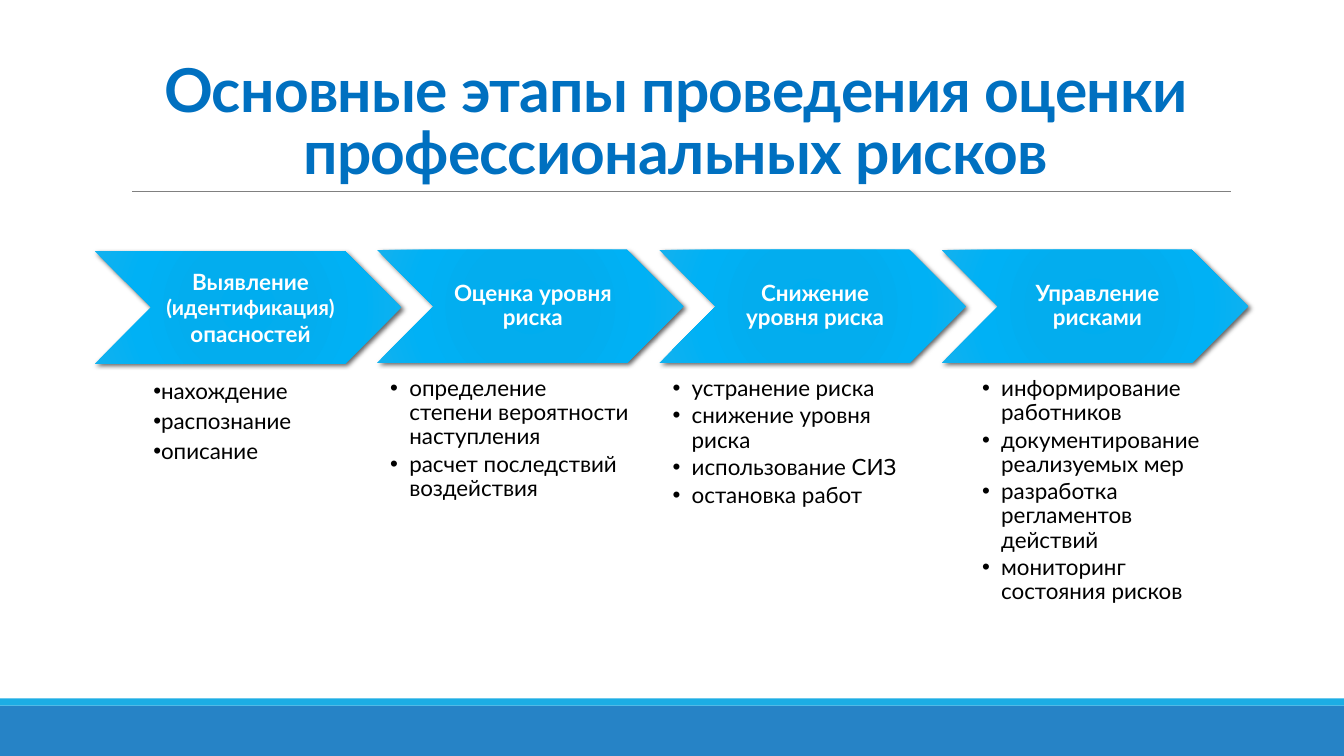
from lxml import etree
from pptx import Presentation
from pptx.dml.color import RGBColor
from pptx.enum.shapes import MSO_CONNECTOR, MSO_SHAPE
from pptx.enum.text import MSO_ANCHOR, MSO_AUTO_SIZE, PP_ALIGN
from pptx.oxml import parse_xml
from pptx.oxml.ns import nsdecls, qn
from pptx.util import Inches, Pt

RECTANGLE, CHEVRON = MSO_SHAPE.RECTANGLE, MSO_SHAPE.CHEVRON
TOP, MIDDLE, BOTTOM = MSO_ANCHOR.TOP, MSO_ANCHOR.MIDDLE, MSO_ANCHOR.BOTTOM
LEFT, CENTER = PP_ALIGN.LEFT, PP_ALIGN.CENTER

TITLE = "Основные этапы проведения оценки профессиональных рисков"
STAGES = [
    {"label": [("Выявление ", 16), ("(идентификация) ", 15), ("опасностей", 16)],
     "steps": ["нахождение", "распознание", "описание"],
     "top": 2.49, "list_left": 1.33, "hanging": 0, "spacing": 1.0},
    {"label": [("Оценка уровня риска", 16)],
     "steps": ["определение степени вероятности наступления",
               "расчет последствий воздействия"],
     "list_left": 3.87},
    {"label": [("Снижение уровня риска", 16)],
     "steps": ["устранение риска", "снижение уровня риска",
               "использование СИЗ", "остановка работ"],
     "list_left": 6.67},
    {"label": [("Управление рисками", 16)],
     "steps": ["информирование работников", "документирование реализуемых мер",
               "разработка регламентов действий", "мониторинг состояния рисков"],
     "list_left": 9.74},
]
STAGE_DEFAULTS = {"top": 2.48, "hanging": 0.19, "spacing": 0.9}

THEME = {
    "font": "Lato",
    "title": "0070C0", "label": "FFFFFF", "list": "000000",
    "band": "2683C6", "stripe": "1CADE4", "rule": "808080",
    "chevron": [(0, "00ADEF"), (34, "03ADEE"), (70, "00B1F5"), (100, "12B1EE")],
    "shadow": "000000",
    "title_size": 43.2, "list_size": 16,
}

FIRST_LEFT, STAGE_PITCH = 0.94, 2.8
CHEVRON_SIZE = (3.04, 1.12)
LABEL_OFFSET, LABEL_WIDTH = 0.56, 1.92
LIST_TOP, LIST_SIZE, LIST_INDENT = 3.74, (2.43, 2.22), 0.19


def place(shape, left, top, width, height):
    shape.left, shape.top = Inches(left), Inches(top)
    shape.width, shape.height = Inches(width), Inches(height)


def set_frame(shape, anchor, margins):
    frame = shape.text_frame
    frame.word_wrap = True
    frame.auto_size = MSO_AUTO_SIZE.NONE
    frame.vertical_anchor = anchor
    (frame.margin_left, frame.margin_top,
     frame.margin_right, frame.margin_bottom) = map(Inches, margins)
    return frame


def write(para, spans, color, bold=False, align=LEFT, spacing=1.0, after=0):
    """Fill a paragraph with (text, size) spans of one colour and weight."""
    para.alignment = align
    para.line_spacing = spacing
    para.space_before, para.space_after = Pt(0), Pt(after)
    for text, size in spans:
        span = para.add_run()
        span.text = text
        span.font.name = THEME["font"]
        span.font.size = Pt(size)
        span.font.bold = bold
        span.font.color.rgb = RGBColor.from_string(color)


def add_bullet(para, hanging):
    props = para._p.get_or_add_pPr()
    props.set("marL", str(Inches(LIST_INDENT)))
    props.set("indent", str(-Inches(hanging)))
    etree.SubElement(props, qn("a:buFont")).set("typeface", "Arial")
    etree.SubElement(props, qn("a:buChar")).set("char", "•")


def add_bar(page, top, height, color):
    bar = page.shapes.add_shape(RECTANGLE, 0, Inches(top), Inches(13.33), Inches(height))
    bar.shadow.inherit = False
    bar.fill.solid()
    bar.fill.fore_color.rgb = RGBColor.from_string(color)
    bar.line.fill.background()


def add_rule(page):
    rule = page.shapes.add_connector(MSO_CONNECTOR.STRAIGHT, Inches(1.31), Inches(1.9),
                                     Inches(12.21), Inches(1.9))
    rule.line.color.rgb = RGBColor.from_string(THEME["rule"])
    rule.line.width = Pt(0.5)
    etree.SubElement(rule._element.spPr, qn("a:effectLst"))


def add_chevron(page, left, top):
    """Draw a chevron with a radial gradient and a soft diagonal shadow."""
    chevron = page.shapes.add_shape(CHEVRON, 0, 0, 0, 0)
    place(chevron, left, top, *CHEVRON_SIZE)
    chevron.line.fill.background()
    chevron.shadow.inherit = False
    chevron.fill.background()
    props = chevron._element.spPr
    stops = "".join(f'<a:gs pos="{pos * 1000}"><a:srgbClr val="{color}"/></a:gs>'
                    for pos, color in THEME["chevron"])
    props.replace(props.find(qn("a:noFill")), parse_xml(
        f'<a:gradFill {nsdecls("a")} rotWithShape="1"><a:gsLst>{stops}</a:gsLst>'
        '<a:path path="circle"><a:fillToRect l="100000" t="100000" r="100000" b="100000"/>'
        '</a:path></a:gradFill>'))
    props.find(qn("a:effectLst")).append(parse_xml(
        f'<a:outerShdw {nsdecls("a")} blurRad="{Pt(3.5)}" dist="{Pt(2)}" dir="2700000" '
        f'algn="tl" rotWithShape="0"><a:srgbClr val="{THEME["shadow"]}">'
        '<a:alpha val="60000"/></a:srgbClr></a:outerShdw>'))


def add_stage(page, left, body, stage):
    add_chevron(page, left, stage["top"])

    label = page.shapes.add_textbox(0, 0, 0, 0)
    place(label, left + LABEL_OFFSET, stage["top"], LABEL_WIDTH, CHEVRON_SIZE[1])
    frame = set_frame(label, MIDDLE, (0.07, 0.02, 0.02, 0.02))
    write(frame.paragraphs[0], stage["label"], THEME["label"], bold=True,
          align=CENTER, spacing=stage["spacing"])

    place(body, stage["list_left"], LIST_TOP, *LIST_SIZE)
    frame = set_frame(body, TOP, (0, 0, 0, 0))
    for index, step in enumerate(stage["steps"]):
        para = frame.add_paragraph() if index else frame.paragraphs[0]
        write(para, [(step, THEME["list_size"])], THEME["list"],
              spacing=stage["spacing"], after=2.4)
        add_bullet(para, stage["hanging"])


def add_title(page):
    title = page.shapes.title
    place(title, 1.2, 0.31, 11, 1.59)
    para = set_frame(title, BOTTOM, (0.1, 0.05, 0.1, 0.05)).paragraphs[0]
    write(para, [(TITLE, THEME["title_size"])], THEME["title"], bold=True,
          align=CENTER, spacing=0.85)
    para.runs[0].font._element.set("spc", "-50")


def main():
    deck = Presentation()
    deck.slide_width, deck.slide_height = Inches(13.33), Inches(7.5)
    comparison_layout = deck.slide_layouts[4]
    page = deck.slides.add_slide(comparison_layout)

    add_bar(page, 7, 0.5, THEME["band"])
    add_bar(page, 6.93, 0.07, THEME["stripe"])
    add_rule(page)
    add_title(page)
    bodies = [holder for holder in page.placeholders if holder.placeholder_format.idx > 0]
    for index, (body, stage) in enumerate(zip(bodies, STAGES)):
        add_stage(page, FIRST_LEFT + index * STAGE_PITCH, body, STAGE_DEFAULTS | stage)

    deck.save("out.pptx")


if __name__ == "__main__":
    main()
